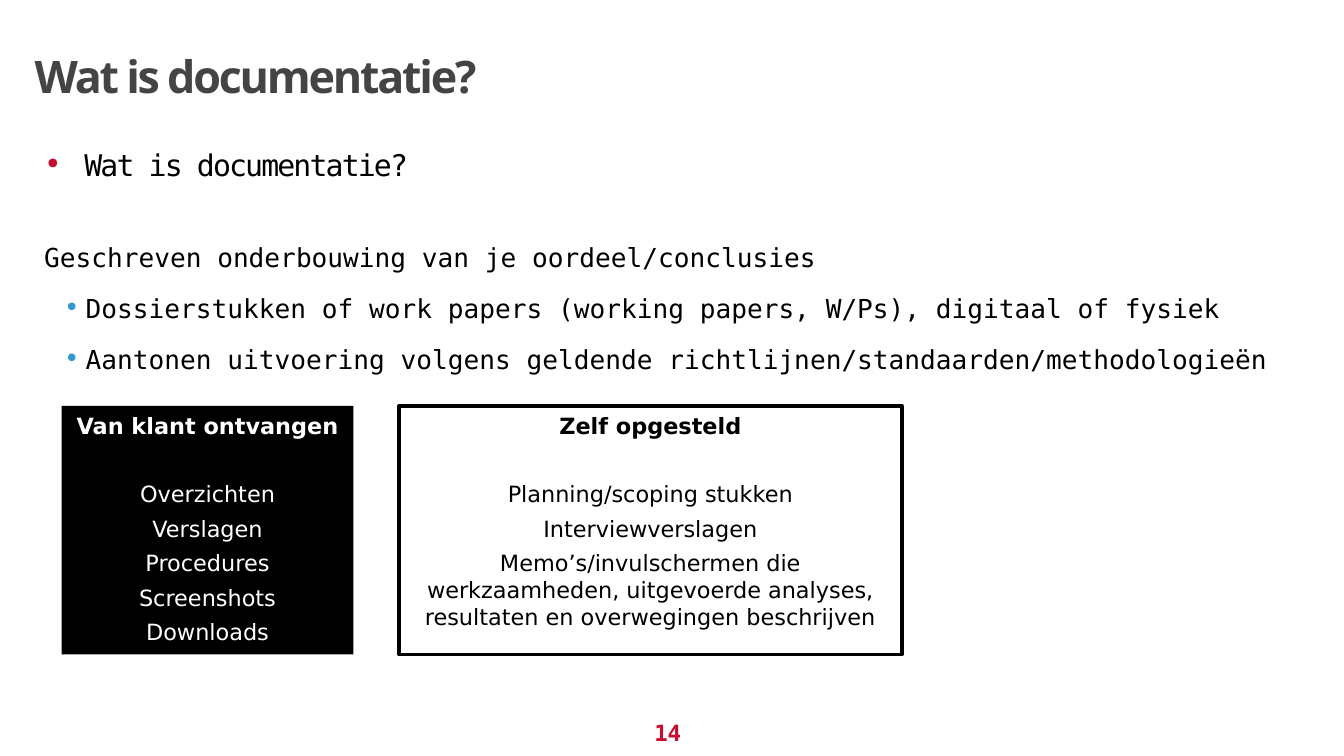
from lxml.etree import SubElement
from pptx import Presentation
from pptx.dml.color import RGBColor
from pptx.enum.shapes import MSO_SHAPE
from pptx.enum.text import MSO_ANCHOR, PP_ALIGN
from pptx.oxml.ns import qn
from pptx.util import Inches, Pt

TITLE = "Wat is documentatie?"
TOPIC = "Wat is documentatie?"
LEAD = "Geschreven onderbouwing van je oordeel/conclusies"
POINTS = [
    "Dossierstukken of work papers (working papers, W/Ps), digitaal of fysiek",
    "Aantonen uitvoering volgens geldende richtlijnen/standaarden/methodologieën",
]
CARDS = [
    {
        "head": "Van klant ontvangen",
        "items": ["Overzichten", "Verslagen", "Procedures", "Screenshots", "Downloads"],
        "width": 2.17, "fill": "black", "ink": "white", "line": None,
    },
    {
        "head": "Zelf opgesteld",
        "items": [
            "Planning/scoping stukken",
            "Interviewverslagen",
            "Memo’s/invulschermen die werkzaamheden, uitgevoerde analyses, "
            "resultaten en overwegingen beschrijven",
        ],
        "width": 3.74, "fill": "white", "ink": "black", "line": "black",
    },
]
PAGE = "14"

THEME = {
    "color": {"black": "000000", "white": "FFFFFF", "gray": "444444",
              "red": "C60C30", "blue": "3399CC"},
    "size": {"title": 24, "topic": 16, "body": 14, "small": 12},
    "font": {"title": "Open Sans", "mono": "DejaVu Sans Mono", "sans": "DejaVu Sans"},
}


def tint(name):
    return RGBColor.from_string(THEME["color"][name])


def write(frame, text, size="body", font="mono", color="black", bold=False,
          track=0, align=PP_ALIGN.LEFT, before=0, after=0, lead=None,
          dot=None, left=0, hang=0):
    first = not frame.text
    para = frame.paragraphs[0] if first else frame.add_paragraph()
    if dot:
        props = para._p.get_or_add_pPr()
        props.set("marL", str(Inches(left)))
        props.set("indent", str(-Inches(hang)))
        paint = SubElement(props, qn("a:buClr"))
        SubElement(paint, qn("a:srgbClr"), val=THEME["color"][dot])
        SubElement(props, qn("a:buFont"), typeface=THEME["font"]["sans"])
        SubElement(props, qn("a:buChar"), char="•")
    para.alignment = align
    para.space_before = Pt(0 if first else before)
    para.space_after = Pt(after)
    if lead:
        para.line_spacing = lead
    run = para.add_run()
    run.text = text
    run.font.size = Pt(THEME["size"][size])
    run.font.name = THEME["font"][font]
    run.font.bold = bold
    run.font.color.rgb = tint(color)
    if track:
        run._r.get_or_add_rPr().set("spc", str(round(track * 100)))


def setup(shape):
    frame = shape.text_frame
    frame.word_wrap = True
    frame.vertical_anchor = MSO_ANCHOR.TOP
    return frame


def area(slide, *rect):
    return setup(slide.shapes.add_textbox(*map(Inches, rect)))


def card(slide, data, left, top, high):
    shape = slide.shapes.add_shape(
        MSO_SHAPE.RECTANGLE, *map(Inches, (left, top, data["width"], high)))
    shape.shadow.inherit = False
    shape.fill.solid()
    shape.fill.fore_color.rgb = tint(data["fill"])
    if data["line"]:
        shape.line.color.rgb = tint(data["line"])
        shape.line.width = Pt(2)
    else:
        shape.line.fill.background()
    frame = setup(shape)
    style = {"size": "small", "font": "sans", "color": data["ink"],
             "align": PP_ALIGN.CENTER, "before": 2}
    write(frame, data["head"], bold=True, after=20, **style)
    for item in data["items"]:
        write(frame, item, after=2, **style)


def main():
    deck = Presentation()
    deck.slide_width = Inches(10)
    deck.slide_height = deck.slide_width * 9 // 16
    slide = deck.slides.add_slide(deck.slide_layouts[6])

    write(area(slide, 4.77, 5.3, 0.46, 0.24), PAGE,
          size="small", color="red", bold=True)
    write(area(slide, 0.16, 0.31, 9.57, 0.62), TITLE,
          size="title", font="title", color="gray", bold=True, track=-1.2)
    write(area(slide, 0.23, 1.04, 7.71, 3.13), TOPIC,
          size="topic", track=-1, dot="red", left=0.3, hang=0.3)

    body = area(slide, 0.23, 1.63, 11.36, 1.3)
    write(body, LEAD, lead=1.5)
    for point in POINTS:
        write(body, point, lead=1.5, before=2,
              dot="blue", left=0.31, hang=0.16)

    left, gap = 0.46, 0.34
    for data in CARDS:
        card(slide, data, left, 3.02, 1.85)
        left += data["width"] + gap

    deck.save("out.pptx")


if __name__ == "__main__":
    main()
